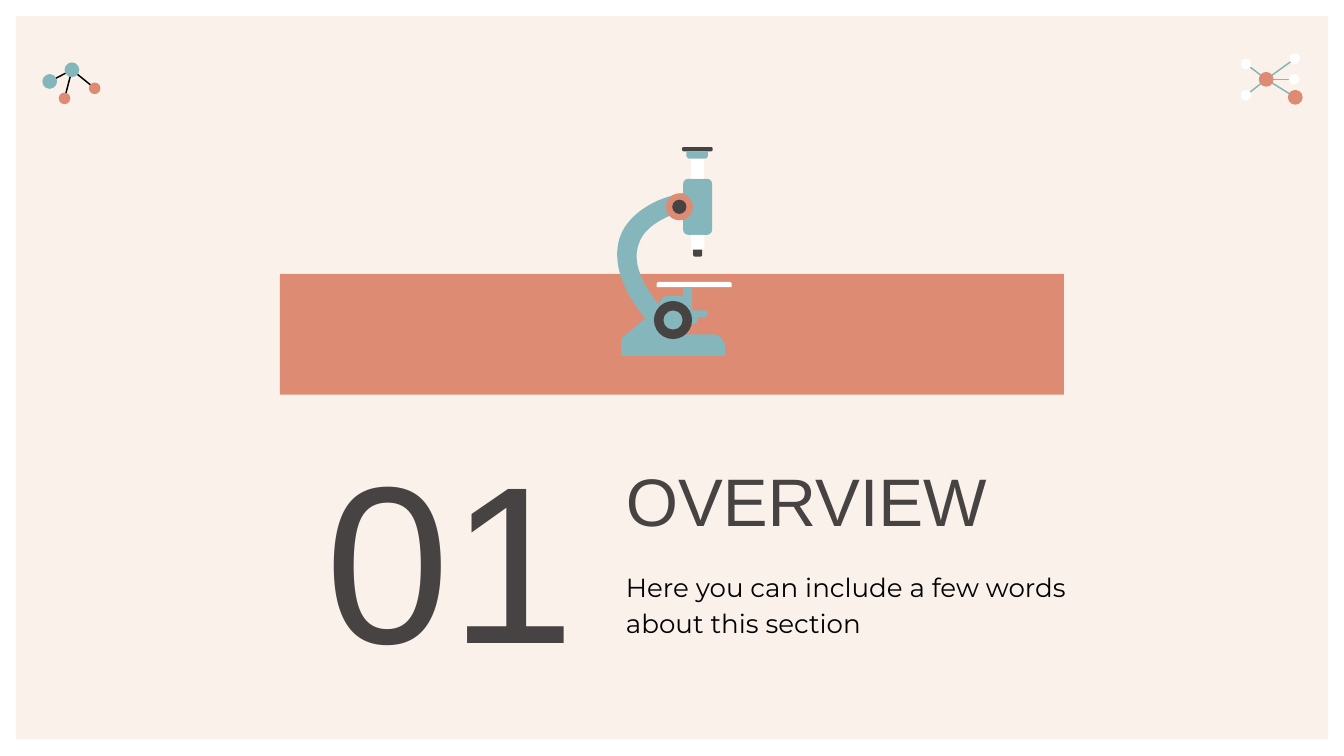
from dataclasses import dataclass

import pptx
import pptx.dml.color
import pptx.enum.shapes
import pptx.enum.text
import pptx.oxml.ns
import pptx.util
from lxml import etree

Cm, Pt = pptx.util.Cm, pptx.util.Pt
SHAPE = pptx.enum.shapes.MSO_SHAPE
ANCHOR = pptx.enum.text.MSO_ANCHOR
ALIGN = pptx.enum.text.PP_ALIGN
COLORS = {
    "cream": "FAF1EA", "coral": "DE8B74", "teal": "84B6BC",
    "dark": "464342", "white": "FFFFFF", "black": "000000",
}


@dataclass
class Part:
    """Preset shape; lengths in cm."""
    kind: int
    left: float
    top: float
    width: float
    height: float
    color: str
    rotation: float = 0
    radius: float | None = None


@dataclass
class Dot:
    """Circle given by its centre and diameter in cm."""
    x: float
    y: float
    size: float
    color: str


@dataclass
class Outline:
    """Closed path: pairs are line ends, sextuples are cubic curves."""
    color: str
    steps: list[tuple[float, ...]]


@dataclass
class Molecule:
    dots: list[Dot]
    bonds: list[tuple[int, int]]
    line_color: str


@dataclass
class Label:
    text: str
    left: float
    top: float
    width: float
    height: float
    size: float
    font: str
    color: str
    anchor: int = ANCHOR.TOP
    align: int = ALIGN.LEFT
    line_spacing: float = 1.0
    space_after: float = 0


def rgb(name: str) -> pptx.dml.color.RGBColor:
    return pptx.dml.color.RGBColor.from_string(COLORS[name])


def paint(sp, color: str) -> None:
    sp.shadow.inherit = False
    sp.fill.solid()
    sp.fill.fore_color.rgb = rgb(color)
    sp.line.fill.background()


def draw_part(s, part: Part) -> None:
    sp = s.shapes.add_shape(part.kind, Cm(part.left), Cm(part.top), Cm(part.width), Cm(part.height))
    sp.rotation = part.rotation
    if part.radius is not None:
        sp.adjustments[0] = part.radius
    paint(sp, part.color)


def draw_dot(s, dot: Dot) -> None:
    r = dot.size / 2
    draw_part(s, Part(SHAPE.OVAL, dot.x - r, dot.y - r, dot.size, dot.size, dot.color))


def curve(start: tuple, step: tuple, count: int = 16) -> list[tuple[float, float]]:
    """Points along a cubic curve."""
    points = []
    for i in range(1, count + 1):
        t = i / count
        u = 1 - t
        weights = (u ** 3, 3 * u * u * t, 3 * u * t * t, t ** 3)
        points.append(tuple(
            sum(w * v for w, v in zip(weights, (start[axis], *step[axis::2]))) for axis in (0, 1)))
    return points


def draw_outline(s, outline: Outline) -> None:
    points = [outline.steps[0]]
    for step in outline.steps[1:]:
        points += [step] if len(step) == 2 else curve(points[-1], step)
    points = [(Cm(x), Cm(y)) for x, y in points]
    builder = s.shapes.build_freeform(*points[0])
    builder.add_line_segments(points[1:], close=True)
    paint(builder.convert_to_shape(), outline.color)


def draw_molecule(s, molecule: Molecule) -> None:
    for first, last in molecule.bonds:
        a, b = molecule.dots[first], molecule.dots[last]
        bond = s.shapes.add_connector(
            pptx.enum.shapes.MSO_CONNECTOR.STRAIGHT, Cm(a.x), Cm(a.y), Cm(b.x), Cm(b.y))
        bond.line.color.rgb = rgb(molecule.line_color)
        bond.line.width = Pt(0.78)
        etree.SubElement(bond._element.spPr, pptx.oxml.ns.qn("a:effectLst"))
    for dot in molecule.dots:
        draw_dot(s, dot)


def draw_label(s, label: Label) -> None:
    box = s.shapes.add_textbox(Cm(label.left), Cm(label.top), Cm(label.width), Cm(label.height))
    tf = box.text_frame
    tf.word_wrap = True
    tf.vertical_anchor = label.anchor
    tf.margin_left = tf.margin_right = tf.margin_top = tf.margin_bottom = Cm(0.25)
    p = tf.paragraphs[0]
    p.text = label.text
    p.alignment = label.align
    p.line_spacing = label.line_spacing
    p.space_after = Pt(label.space_after)
    p.font.size = Pt(label.size)
    p.font.name = label.font
    p.font.color.rgb = rgb(label.color)


BACKGROUND = Part(SHAPE.RECTANGLE, 0.3, 0.3, 24.8, 13.68, "cream")
BANNER = Part(SHAPE.RECTANGLE, 5.29, 5.18, 14.82, 2.28, "coral")

MOLECULES = [
    Molecule([Dot(1.36, 1.32, 0.28, "teal"), Dot(0.94, 1.54, 0.28, "teal"),
              Dot(1.79, 1.67, 0.22, "coral"), Dot(1.22, 1.86, 0.22, "coral")],
             [(0, 1), (0, 2), (0, 3)], "black"),
    Molecule([Dot(23.93, 1.5, 0.28, "coral"), Dot(24.48, 1.84, 0.28, "coral"),
              Dot(23.55, 1.21, 0.2, "white"), Dot(24.47, 1.11, 0.2, "white"),
              Dot(24.46, 1.5, 0.2, "white"), Dot(23.55, 1.8, 0.2, "white")],
             [(0, i) for i in range(1, 6)], "teal"),
]

ARM = Outline("teal", [
    (12.98, 3.63), (12.67, 3.71), (12.65, 3.71, 11.91, 3.91, 11.71, 4.5),
    (11.58, 4.95, 11.73, 5.46, 12.22, 6.05), (12.5, 5.82),
    (12.09, 5.33, 11.96, 4.93, 12.07, 4.62), (12.19, 4.22, 12.73, 4.06, 12.75, 4.04),
    (13.06, 3.99)])
BASE = Outline("teal", [
    (12.47, 5.79), (11.74, 6.4), (11.74, 6.73), (13.7, 6.73), (13.7, 6.55),
    (13.7, 6.43, 13.59, 6.32, 13.46, 6.32), (12.7, 6.32)])
BRACKET = Outline("teal", [
    (12.91, 5.43), (12.91, 5.59), (12.62, 5.59), (12.55, 5.59, 12.47, 5.66, 12.47, 5.74),
    (12.47, 5.79), (12.8, 6.13), (13.08, 6.13), (13.13, 6.13, 13.18, 6.1, 13.18, 6.05),
    (13.18, 5.99), (13.31, 5.99), (13.4, 5.99, 13.4, 5.87, 13.31, 5.87),
    (13.08, 5.87), (13.08, 5.43)])
ROUND_TOP = SHAPE.ROUND_2_SAME_RECTANGLE
TUBE = [
    Part(SHAPE.ROUNDED_RECTANGLE, 12.91, 3.38, 0.55, 1.06, "teal", radius=0.18),
    Part(SHAPE.RECTANGLE, 13.06, 2.87, 0.25, 0.51, "white"),
    Part(ROUND_TOP, 13.06, 4.44, 0.25, 0.28, "white", 180),
    Part(ROUND_TOP, 13.1, 4.72, 0.17, 0.13, "dark", 180, 0.25),
    Part(ROUND_TOP, 12.97, 2.87, 0.41, 0.13, "teal", 180, 0.5),
    Part(SHAPE.ROUNDED_RECTANGLE, 12.89, 2.78, 0.58, 0.08, "dark", radius=0.4),
]
STAGE = Part(ROUND_TOP, 12.41, 5.33, 1.42, 0.1, "white", radius=0.4)
JOINT = [Dot(12.84, 3.91, 0.51, "coral"), Dot(12.84, 3.91, 0.27, "dark")]
KNOB = [Dot(12.72, 6.05, 0.72, "dark"), Dot(12.72, 6.05, 0.36, "teal")]
MICROSCOPE = [ARM, *TUBE, *JOINT, BASE, STAGE, BRACKET, *KNOB]

LABELS = [
    Label("01", 5.13, 7.8, 6.76, 5.46, 120, "Arial", "dark", ANCHOR.BOTTOM, ALIGN.CENTER),
    Label("OVERVIEW", 11.58, 8.28, 11.66, 2.34, 36, "Arial", "dark", ANCHOR.MIDDLE),
    Label("Here you can include a few words about this section", 11.58, 10.46, 9.12, 2.11,
          14, "Montserrat", "black", line_spacing=1.15, space_after=16),
]


def main() -> None:
    prs = pptx.Presentation()
    prs.slide_width, prs.slide_height = Cm(25.4), Cm(14.29)
    s = prs.slides.add_slide(prs.slide_layouts[6])

    # Backdrop and corner molecules
    draw_part(s, BACKGROUND)
    for molecule in MOLECULES:
        draw_molecule(s, molecule)

    # Banner with the microscope
    draw_part(s, BANNER)
    draw = {Part: draw_part, Dot: draw_dot, Outline: draw_outline}
    for piece in MICROSCOPE:
        draw[type(piece)](s, piece)

    # Section number, title and description
    for label in LABELS:
        draw_label(s, label)

    prs.save("out.pptx")


if __name__ == "__main__":
    main()
